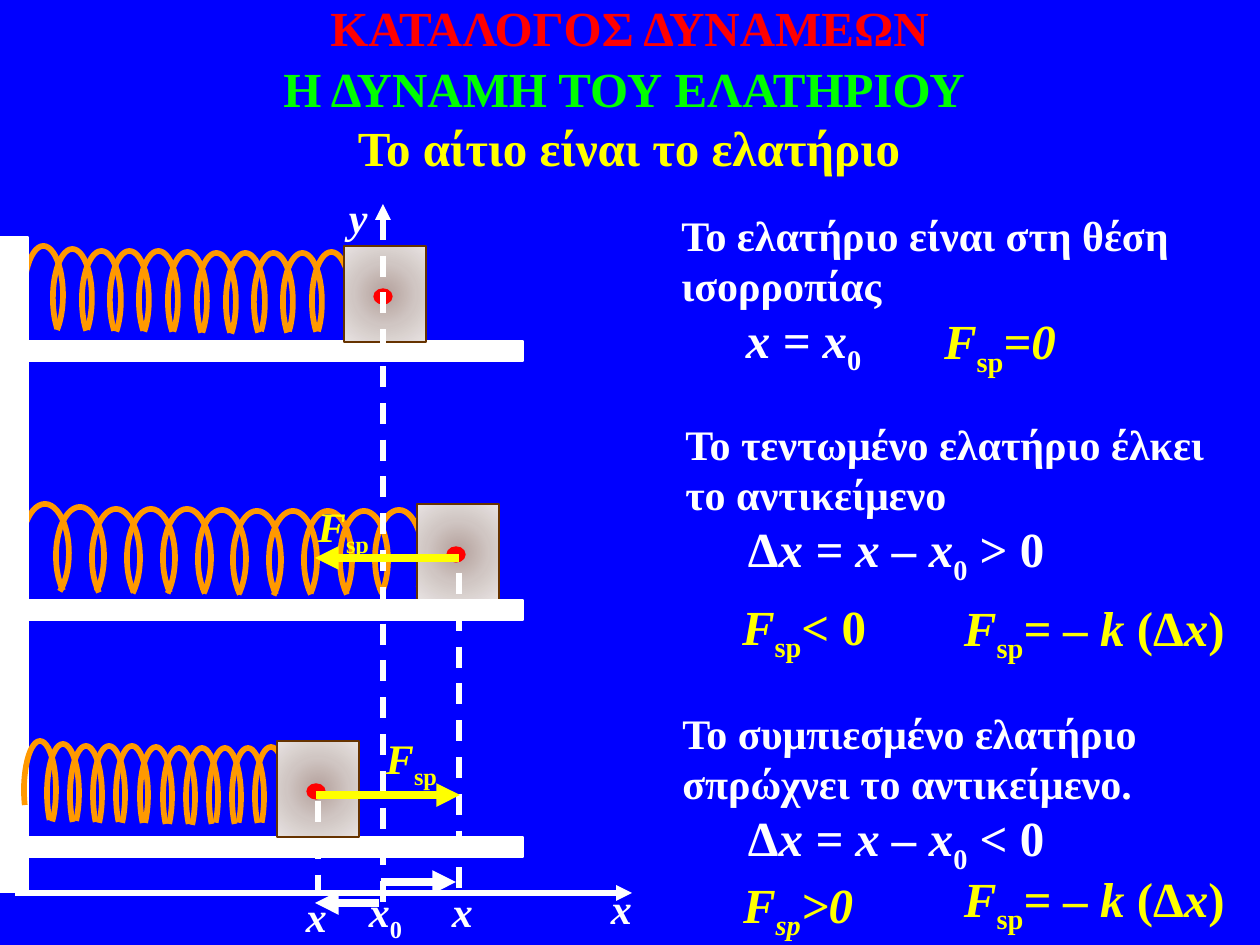
from pptx import Presentation
from pptx.dml.color import RGBColor
from pptx.enum.dml import MSO_LINE
from pptx.enum.shapes import MSO_CONNECTOR, MSO_SHAPE
from pptx.enum.text import MSO_ANCHOR, PP_ALIGN
from pptx.oxml import parse_xml
from pptx.oxml.ns import nsdecls, qn
from pptx.util import Emu, Pt

BLUE = RGBColor(0x00, 0x00, 0xFF)
WHITE = RGBColor(0xFF, 0xFF, 0xFF)
RED = RGBColor(0xFF, 0x00, 0x00)
GREEN = RGBColor(0x00, 0xFF, 0x00)
YELLOW = RGBColor(0xFF, 0xFF, 0x00)
ORANGE = RGBColor(0xFF, 0x99, 0x00)
BROWN = RGBColor(0x66, 0x33, 0x00)
STOPS = ((0, "B4A09B"), (50, "D0C6C3"), (100, "E8E3E2"))

# Arc angles and drop in px of each coil, left to right
ANGLES = [(81.14, 41.24)] + [(69.78, 38.88)] * 6 + [(69.78, 37.27)] * 3 + [(69.78, 33.33)]
DROPS = (0, 3, 5, 5, 5, 6, 7, 7, 7, 7, 6)


def px(num):
    return Emu(round(num * 914400 / 126))


class Board:
    font = "Times New Roman"

    def __init__(self, deck):
        self.slide = deck.slides.add_slide(deck.slide_layouts[6])
        self.shapes = self.slide.shapes
        fill = self.slide.background.fill
        fill.solid()
        fill.fore_color.rgb = BLUE

    def shape(self, kind, x, y, w, h, fill=None, line=None, width=0.75):
        item = self.shapes.add_shape(kind, px(x), px(y), px(w), px(h))
        item.shadow.inherit = False
        if fill is None:
            item.fill.background()
        else:
            item.fill.solid()
            item.fill.fore_color.rgb = fill
        if line is None:
            item.line.fill.background()
        else:
            item.line.color.rgb = line
            item.line.width = Pt(width)
        return item

    def bar(self, x, y, w, h):
        self.shape(MSO_SHAPE.RECTANGLE, x, y, w, h, WHITE, WHITE)

    def spring(self, x, y, span, w):
        for i, (ends, drop) in enumerate(zip(ANGLES, DROPS)):
            left = x + round(i * span / (len(DROPS) - 1))
            coil = self.shape(MSO_SHAPE.ARC, left, y + drop, w, 98, None, ORANGE, 3.25)
            coil.adjustments[0], coil.adjustments[1] = ends

    def block(self, x, y):
        box = self.shape(MSO_SHAPE.RECTANGLE, x, y, 82, 96, None, BROWN)
        stops = "".join(
            f'<a:gs pos="{pos * 1000}"><a:srgbClr val="{tint}"/></a:gs>' for pos, tint in STOPS
        )
        props = box._element.spPr
        props.replace(props.find(qn("a:noFill")), parse_xml(
            f'<a:gradFill {nsdecls("a")}><a:gsLst>{stops}</a:gsLst><a:path path="circle">'
            '<a:fillToRect l="50000" t="50000" r="50000" b="50000"/></a:path></a:gradFill>'))
        self.shape(MSO_SHAPE.OVAL, x + 30, y + 43, 18, 15, RED, RED)

    def line(self, x1, y1, x2, y2, color=WHITE, width=3.0, dash=False, tip=None):
        item = self.shapes.add_connector(MSO_CONNECTOR.STRAIGHT, px(x1), px(y1), px(x2), px(y2))
        item.line.color.rgb = color
        item.line.width = Pt(width)
        if dash:
            item.line.dash_style = MSO_LINE.DASH
        if tip:
            item.line._get_or_add_ln().append(
                parse_xml(f'<a:{tip} {nsdecls("a")} type="triangle"/>'))
        item._element.spPr.append(parse_xml(f'<a:effectLst {nsdecls("a")}/>'))

    def style(self, run, size, color, flags=""):
        """Flags: i is italic, s is subscript."""
        run.font.name = self.font
        run.font.size = Pt(size)
        run.font.bold = True
        run.font.italic = "i" in flags
        run.font.color.rgb = color
        if "s" in flags:
            run._r.get_or_add_rPr().set("baseline", "-25000")

    def title(self, x, y, w, h, text, color):
        frame = self.shapes.add_textbox(px(x), px(y), px(w), px(h)).text_frame
        frame.word_wrap = True
        frame.vertical_anchor = MSO_ANCHOR.MIDDLE
        frame.text = text
        frame.paragraphs[0].alignment = PP_ALIGN.CENTER
        self.style(frame.paragraphs[0].runs[0], 28, color)

    def note(self, x, y, w, text, inset=0):
        frame = self.shape(MSO_SHAPE.RECTANGLE, x, y, w, 115, BLUE).text_frame
        frame.word_wrap = True
        frame.vertical_anchor = MSO_ANCHOR.TOP
        frame.text = text
        for para in frame.paragraphs:
            para.alignment = PP_ALIGN.LEFT
            para._p.get_or_add_pPr().set("marL", str(px(inset)))
            self.style(para.runs[0], 24, WHITE)

    def label(self, x, y, w, size, color, *parts):
        box = self.shapes.add_textbox(px(x), px(y), px(w), px(50 if size == 24 else 59))
        frame = box.text_frame
        frame.word_wrap = True
        frame.margin_left = frame.margin_right = frame.margin_top = frame.margin_bottom = 0
        for text, flags in parts:
            run = frame.paragraphs[0].add_run()
            run.text = text
            self.style(run, size, color, flags)


def main():
    deck = Presentation()
    deck.slide_width, deck.slide_height = px(1260), px(945)
    board = Board(deck)
    force = (("F", "i"), ("sp", "s"))
    law = (*force, ("= – k ", "i"), ("(Δ", ""), ("x", "i"), (")", ""))
    shift = (("Δ", ""), ("x = x – x", "i"), ("0", "s"))

    # Headings
    board.title(141, 50, 966, 76, "Η ΔΥΝΑΜΗ ΤΟΥ ΕΛΑΤΗΡΙΟΥ", GREEN)
    board.title(345, 111, 568, 72, "Το αίτιο είναι το ελατήριο", YELLOW)
    board.title(94, -14, 1071, 81, "ΚΑΤΑΛΟΓΟΣ ΔΥΝΑΜΕΩΝ", RED)

    # Stretched spring, then floors, x axis, resting spring and wall
    board.spring(21, 504, 354, 48)
    board.block(417, 504)
    for top in (341, 600, 837):
        board.bar(24, top, 499, 20)
    board.line(15, 893, 632, 893, tip="tailEnd")
    board.spring(24, 246, 288, 39)
    board.block(344, 246)
    board.bar(0, 237, 28, 655)

    # Rest position and y axis
    board.line(383, 204, 383, 914, dash=True, tip="headEnd")
    board.label(369, 886, 52, 24, WHITE, ("x", "i"), ("0", "s"))

    # Compressed spring
    board.spring(24, 741, 231, 32)
    board.block(277, 741)

    # Positions, shifts and forces
    board.line(459, 573, 459, 901, dash=True)
    board.line(318, 801, 318, 905, dash=True)
    for start, end, y, color in (
        (459, 315, 558, YELLOW), (316, 460, 795, YELLOW),
        (381, 456, 882, WHITE), (379, 315, 903, WHITE),
    ):
        board.line(start, y, end, y, color, 4.5, tip="tailEnd")
    for x, y, name in ((611, 883, "x"), (349, 192, "y"), (452, 886, "x"), (306, 891, "x")):
        board.label(x, y, 23, 24, WHITE, (name, "i"))
    for x, y in ((318, 501), (386, 733)):
        board.label(x, y, 55, 24, YELLOW, *force)

    # Explanations
    board.note(630, 203, 630, "Το ελατήριο είναι στη θέση ισορροπίας", 39)
    board.note(634, 412, 626, "Το τεντωμένο ελατήριο έλκει το αντικείμενο", 39)
    board.note(670, 701, 590, "Το συμπιεσμένο ελατήριο\nσπρώχνει το αντικείμενο.")

    # Formulas
    board.label(746, 309, 129, 28, WHITE, ("x = x", "i"), ("0", "s"))
    board.label(944, 311, 117, 28, YELLOW, *force, ("=0", "i"))
    board.label(748, 519, 312, 28, WHITE, *shift, (" > 0", ""))
    board.label(742, 596, 132, 28, YELLOW, *force, ("< ", "i"), ("0", ""))
    board.label(748, 808, 312, 28, WHITE, *shift, (" < 0", ""))
    board.label(743, 874, 117, 28, YELLOW, ("F", "i"), ("sp", "is"), (">0", "i"))
    for y in (597, 868):
        board.label(964, y, 286, 28, YELLOW, *law)

    deck.save("out.pptx")


if __name__ == "__main__":
    main()
